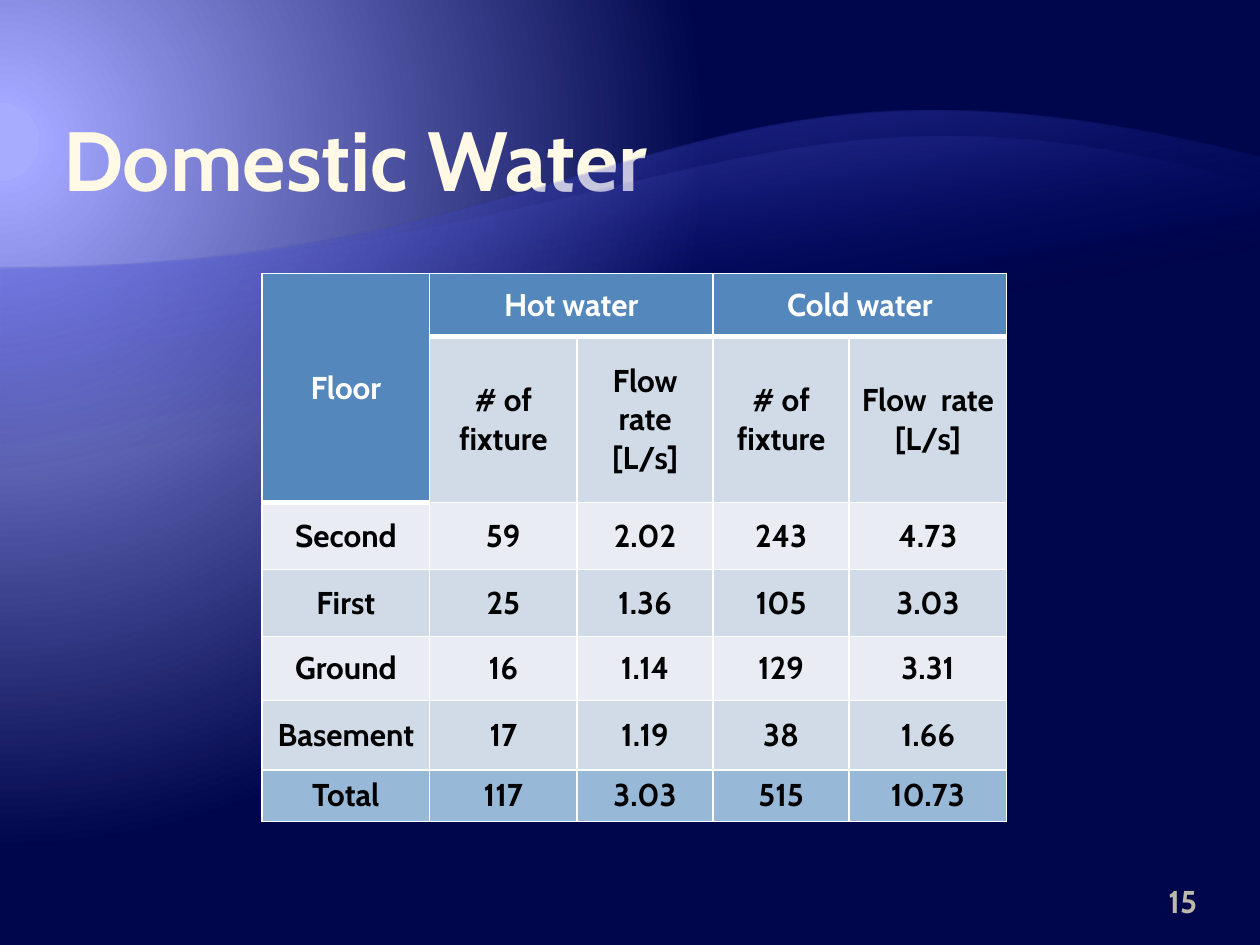
from lxml import etree
from pptx import Presentation, util as u
from pptx.dml.color import RGBColor
from pptx.enum import text
from pptx.oxml import parse_xml
from pptx.oxml.ns import nsdecls, qn

rgb = RGBColor.from_string


def set_gradient(parent, stops, direction):
    gs = "".join(
        f'<a:gs pos="{pos * 1000}"><a:srgbClr val="{color}"><a:alpha val="{alpha * 1000}"/></a:srgbClr></a:gs>'
        for pos, color, alpha in stops
    )
    grad = parse_xml(f'<a:gradFill {nsdecls("a")} rotWithShape="1"><a:gsLst>{gs}</a:gsLst>{direction}</a:gradFill>')
    parent.replace(parent.find(qn("a:solidFill")), grad)


def set_font(p, size, color):
    p.font.name = "Cabin"
    p.font.size = u.Pt(size)
    p.font.bold = True
    p.font.color.rgb = rgb(color)


prs = Presentation()
prs.slide_width, prs.slide_height = u.Inches(10), u.Inches(7.5)
s = prs.slides.add_slide(prs.slide_layouts[5])

s.background.fill.solid()
set_gradient(
    s.element.find(".//" + qn("p:bgPr")),
    [(5, "A8ACFF", 100), (5, "A3A7FF", 100), (90, "00064B", 100)],
    '<a:path path="circle"><a:fillToRect l="20000" t="30000" r="135000" b="100000"/></a:path>',
)

waves = [
    ([(0, 2.13), (5, 2.13), (5.34, 0.05), (10, 1.25)], 7.33, "797FFF", 55),
    ([(0, 2.13), (5, 2.13), (5.98, 0.31), (10, 1.47)], 6.37, "A3A7FF", 30),
]
steps = 60
for curve, bottom, color, alpha in waves:
    points = []
    for i in range(steps + 1):
        t = i / steps
        weights = [(1 - t) ** 3, 3 * t * (1 - t) ** 2, 3 * t ** 2 * (1 - t), t ** 3]
        points.append([u.Inches(sum(w * c[k] for w, c in zip(weights, curve))) for k in (0, 1)])
    points += [(u.Inches(10), u.Inches(bottom)), (0, u.Inches(bottom))]
    fb = s.shapes.build_freeform(*points[0])
    fb.add_line_segments(points[1:], close=True)
    sp = fb.convert_to_shape()
    sp.shadow.inherit = False
    sp.line.fill.background()
    sp.fill.solid()
    set_gradient(sp.element.spPr, [(65, "000D9E", 0), (100, color, alpha)],
                 f'<a:lin ang="{260 * 60000}" scaled="0"/>')

title = s.shapes.title
title.left, title.top, title.width, title.height = map(u.Inches, (0.5, 0.58, 5.33, 1.08))
number = s.shapes.add_textbox(*map(u.Inches, (8.92, 6.95, 0.58, 0.4)))
labels = [
    (title, "Domestic Water", 48, "FFF9E5", text.PP_ALIGN.LEFT, (0, 0.01, 0, 0.01)),
    (number, "15", 18, "BDB8A9", text.PP_ALIGN.RIGHT, (0.1, 0.05, 0, 0.05)),
]
for sp, words, size, color, align, insets in labels:
    tf = sp.text_frame
    tf.text = words
    tf.word_wrap = True
    tf.auto_size = text.MSO_AUTO_SIZE.NONE
    tf.vertical_anchor = text.MSO_ANCHOR.BOTTOM
    tf.margin_left, tf.margin_top, tf.margin_right, tf.margin_bottom = map(u.Inches, insets)
    tf.paragraphs[0].alignment = align
    set_font(tf.paragraphs[0], size, color)

rows = [
    ["Floor", "Hot water", "", "Cold water", ""],
    ["", "# of fixture", "Flow rate\n[L/s]", "# of fixture", "Flow  rate\n[L/s]"],
    ["Second", "59", "2.02", "243", "4.73"],
    ["First", "25", "1.36", "105", "3.03"],
    ["Ground", "16", "1.14", "129", "3.31"],
    ["Basement", "17", "1.19", "38", "1.66"],
    ["Total", "117", "3.03", "515", "10.73"],
]
col_widths = [1.33, 1.17, 1.08, 1.08, 1.25]
row_heights = [0.5, 1.32, 0.53, 0.53, 0.51, 0.55, 0.41]
row_fills = ["5488BC", "D1DAE7", "E9EDF3", "D1DAE7", "E9EDF3", "D1DAE7", "98B8D7"]

table = s.shapes.add_table(
    len(rows), len(col_widths), u.Inches(2.08), u.Inches(2.17),
    u.Inches(sum(col_widths)), u.Inches(sum(row_heights)),
).table
for col, width in zip(table.columns, col_widths):
    col.width = u.Inches(width)
for row, height in zip(table.rows, row_heights):
    row.height = u.Inches(height)

for i, row in enumerate(rows):
    for j, words in enumerate(row):
        cell = table.cell(i, j)
        header_end = 1 if j == 0 else 0
        header = i <= header_end
        widths = {"L": 1, "R": 1, "T": 3 if i == header_end + 1 else 1, "B": 3 if i == header_end else 1}
        tcPr = cell._tc.get_or_add_tcPr()
        for side, width in widths.items():
            ln = etree.SubElement(tcPr, qn(f"a:ln{side}"), w=str(u.Pt(width)))
            line_fill = etree.SubElement(ln, qn("a:solidFill"))
            etree.SubElement(line_fill, qn("a:srgbClr"), val="FFFFFF")
        cell.fill.solid()
        cell.fill.fore_color.rgb = rgb(row_fills[0] if header else row_fills[i])
        cell.vertical_anchor = text.MSO_ANCHOR.MIDDLE
        cell.text_frame.text = words
        for p in cell.text_frame.paragraphs:
            p.alignment = text.PP_ALIGN.CENTER
            set_font(p, 18, "FFFFFF" if header else "000000")

for first, last in [((0, 0), (1, 0)), ((0, 1), (0, 2)), ((0, 3), (0, 4))]:
    table.cell(*first).merge(table.cell(*last))

prs.save("out.pptx")
